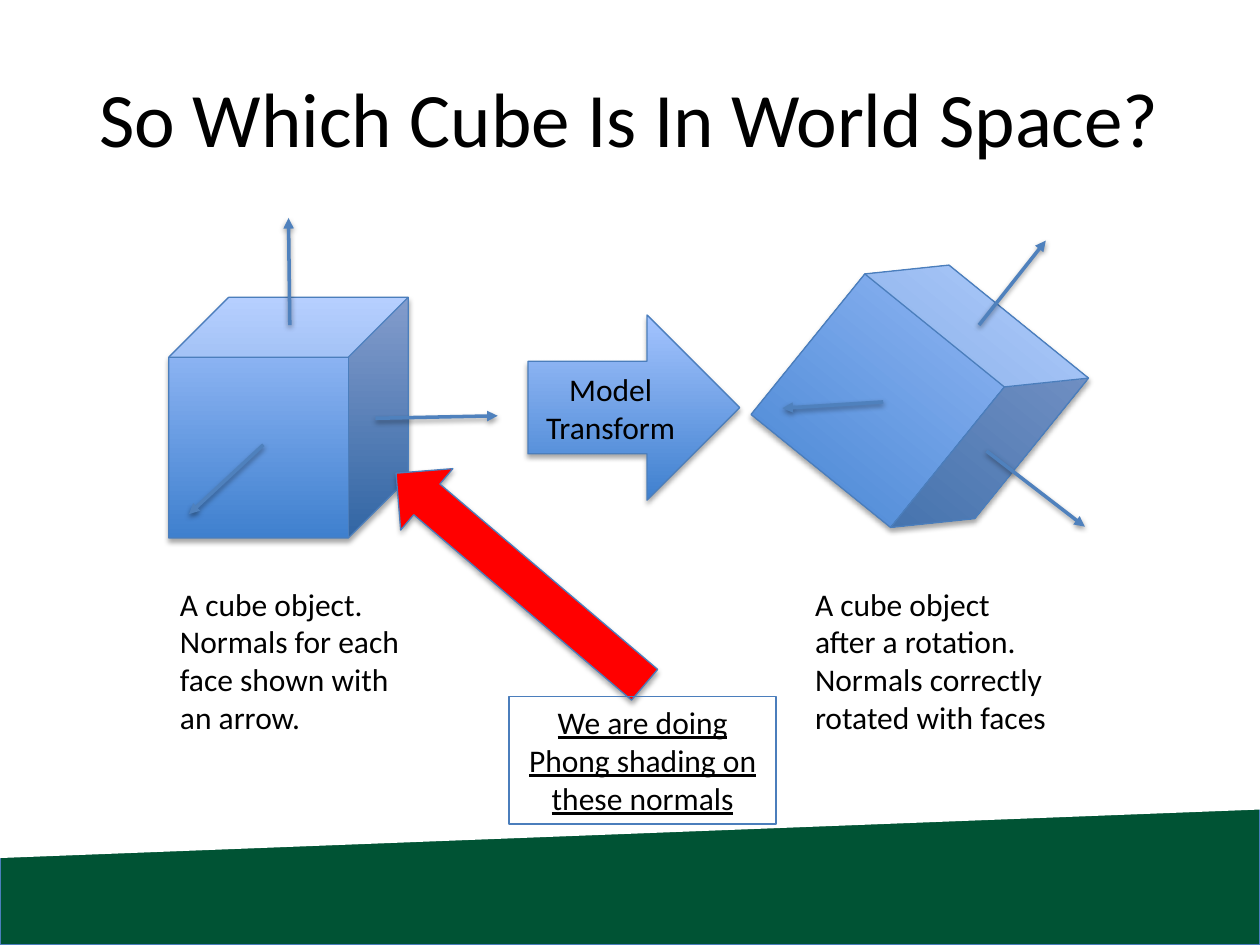
"""Build the slide that asks which cube is in world space."""
from lxml import etree
from pptx import Presentation
from pptx.dml.color import RGBColor
from pptx.enum.shapes import MSO_CONNECTOR, MSO_SHAPE
from pptx.enum.text import MSO_ANCHOR, MSO_AUTO_SIZE, PP_ALIGN
from pptx.oxml.ns import qn
from pptx.util import Inches, Pt

RECT = MSO_SHAPE.RECTANGLE
SLANT = MSO_SHAPE.PARALLELOGRAM
CUBE = MSO_SHAPE.CUBE
RIGHT = MSO_SHAPE.RIGHT_ARROW
UP = MSO_SHAPE.UP_ARROW
LINE = MSO_CONNECTOR.STRAIGHT
LEFT, CENTER = PP_ALIGN.LEFT, PP_ALIGN.CENTER
TOP, MIDDLE = MSO_ANCHOR.TOP, MSO_ANCHOR.MIDDLE
GROW = MSO_AUTO_SIZE.SHAPE_TO_FIT_TEXT

FONT = "Calibri"
COLORS = {
    "green": "005334", "white": "FFFFFF", "black": "000000", "red": "FF0000",
    "deep": "3F80CE", "pale": "A4C4FF", "edge": "4B7EBC", "normal": "4F81BD",
}
RGB = {name: RGBColor.from_string(value) for name, value in COLORS.items()}


def shade(shape, dist, alpha):
    props = shape._element.spPr
    effects = props.find(qn("a:effectLst"))
    if effects is None:
        effects = etree.SubElement(props, qn("a:effectLst"))
    outer = etree.SubElement(effects, qn("a:outerShdw"), blurRad=str(Pt(3.1)),
                             dist=str(Pt(dist)), dir="5400000", rotWithShape="0")
    color = etree.SubElement(outer, qn("a:srgbClr"), val=COLORS["black"])
    etree.SubElement(color, qn("a:alpha"), val=str(alpha * 1000))


def write(shape, lines, size=18, align=LEFT, anchor=TOP, under=None):
    frame = shape.text_frame
    frame.word_wrap = True
    frame.vertical_anchor = anchor
    for i, line in enumerate(lines):
        para = frame.paragraphs[0] if i == 0 else frame.add_paragraph()
        para.alignment = align
        run = para.add_run()
        run.text = line
        run.font.name = FONT
        run.font.size = Pt(size)
        run.font.underline = under
        run.font.color.rgb = RGB["black"]


deck = Presentation()
deck.slide_width, deck.slide_height = Inches(10), Inches(7.5)
slide = deck.slides.add_slide(deck.slide_layouts[6])
shapes = slide.shapes

band = shapes.add_shape(RECT, Inches(0), Inches(5.61), Inches(10), Inches(1.89))
cover = shapes.add_shape(SLANT, Inches(3.84), Inches(0.65), Inches(2.32), Inches(10))
cover.rotation = 90
cover.adjustments[0] = 0.166
cover._element.spPr.xfrm.set("flipH", "1")
cover.shadow.inherit = False
cover.fill.solid()
cover.fill.fore_color.rgb = RGB["white"]
cover.line.fill.background()

title = shapes.add_textbox(Inches(0.5), Inches(0.3), Inches(9), Inches(1.25))
write(title, ["So Which Cube Is In World Space?"], 44, CENTER, MIDDLE)

cubes = [
    (1.34, 2.36, 0, [(2.3, 2.58, 2.29, 1.73), (2.98, 3.32, 3.95, 3.3),
                     (2.09, 3.53, 1.5, 4.08)]),
    (6.35, 2.19, 39, [(7.77, 2.58, 8.3, 1.91), (7.83, 3.58, 8.61, 4.18),
                      (7.01, 3.19, 6.21, 3.24)]),
]
blue = []
for x, y, turn, normals in cubes:
    group = shapes.add_group_shape()
    cube = group.shapes.add_shape(CUBE, Inches(x), Inches(y), Inches(1.9), Inches(1.91))
    cube.rotation = turn
    blue.append(cube)
    for ends in normals:
        normal = group.shapes.add_connector(LINE, *[Inches(v) for v in ends])
        normal.line.color.rgb = RGB["normal"]
        normal.line.width = Pt(2)
        etree.SubElement(normal.line._get_or_add_ln(), qn("a:tailEnd"), type="triangle")
        shade(normal, 1.6, 38)

notes = [
    (1.33, ["A cube object.", "Normals for each face shown with an arrow."]),
    (6.37, ["A cube object after a rotation.", "Normals correctly rotated with faces"]),
]
for x, lines in notes:
    note = shapes.add_textbox(Inches(x), Inches(4.59), Inches(2.12), Inches(1.31))
    write(note, lines)
    note.text_frame.auto_size = GROW

model = shapes.add_shape(RIGHT, Inches(4.19), Inches(2.5), Inches(1.68), Inches(1.47))
write(model, ["Model", "Transform"], align=CENTER, anchor=MIDDLE)
blue.append(model)

point = shapes.add_shape(UP, Inches(3.81), Inches(3.3), Inches(0.64), Inches(2.59))
point.rotation = 310.4

phong = shapes.add_shape(RECT, Inches(4.04), Inches(5.53), Inches(2.12), Inches(1.01))
phong.shadow.inherit = False
phong.fill.background()
write(phong, ["We are doing Phong shading on these normals"], align=CENTER, under=True)
phong.text_frame.auto_size = GROW

for shape in blue:
    shape.fill.gradient()
    shape.fill.gradient_angle = 90
    for stop, name in zip(shape.fill.gradient_stops, ("deep", "pale")):
        stop.color.rgb = RGB[name]

for shape, name in ((band, "green"), (point, "red")):
    shape.fill.solid()
    shape.fill.fore_color.rgb = RGB[name]

for shape in [band, point, phong] + blue:
    shape.line.color.rgb = RGB["edge"]
    shape.line.width = Pt(0.75)

for shape in [band, point] + blue:
    shade(shape, 1.8, 35)

deck.save("out.pptx")
